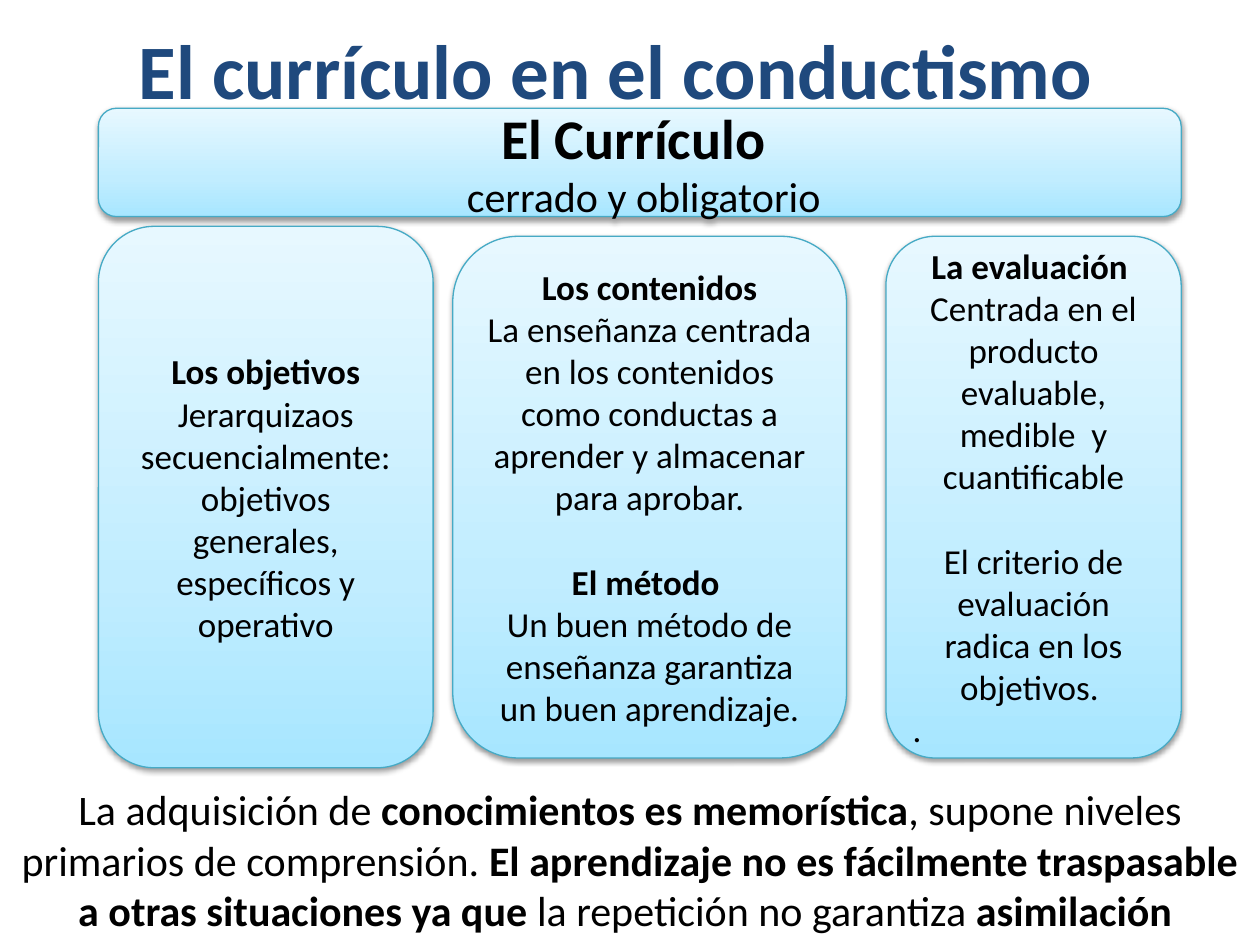
from dataclasses import dataclass

from pptx import Presentation, util as u
from pptx.dml.color import RGBColor
from pptx.enum import shapes, text
from pptx.oxml import parse_xml
from pptx.oxml.ns import nsdecls, qn

NAVY = RGBColor(0x1F, 0x49, 0x7D)
BLACK = RGBColor(0, 0, 0)
TEAL = RGBColor(0x46, 0xAA, 0xC5)
STOPS = (
    (0, RGBColor(0xA7, 0xE6, 0xFF)),
    (35, RGBColor(0xC1, 0xED, 0xFF)),
    (100, RGBColor(0xE7, 0xF8, 0xFF)),
)
FONT = "Calibri"
CELL = u.Inches(10) / 128  # square grid: 128 columns by 96 rows
GAP = 24.4  # one line of 20 pt text
MID, TOP = text.MSO_ANCHOR.MIDDLE, text.MSO_ANCHOR.TOP
CENTER, JUSTIFY = text.PP_ALIGN.CENTER, text.PP_ALIGN.JUSTIFY


@dataclass(frozen=True)
class Run:
    words: str
    bold: bool = False
    size: float = 20
    color: RGBColor = BLACK


@dataclass(frozen=True)
class Para:
    runs: tuple[Run, ...]
    before: float = 0
    align: text.PP_ALIGN = CENTER


@dataclass(frozen=True)
class Block:
    col: float
    row: float
    cols: float
    rows: float
    paras: tuple[Para, ...]
    card: bool = True
    anchor: text.MSO_ANCHOR = MID


def line(words: str, bold: bool = False, size: float = 20,
         color: RGBColor = BLACK, **form) -> Para:
    return Para((Run(words, bold, size, color),), **form)


TITLE = Block(5, -1, 115.2, 16, (
    line("El currículo en el conductismo", True, 44, NAVY),
), card=False)

HEAD = Block(10, 11, 110, 11, (
    line("El Currículo ", True, 32),
    Para((Run(" "), Run("cerrado y obligatorio", size=24))),
))

GOALS = Block(10, 23, 34, 55, (
    line("Los objetivos", True),
    line("Jerarquizaos secuencialmente: objetivos generales, "
         "específicos y operativo"),
))

GRADES = Block(90, 24, 30, 53, (
    line("La evaluación ", True),
    line("Centrada en el producto evaluable, medible  y cuantificable"),
    line("El criterio de evaluación radica en los objetivos. ", before=GAP),
    line(".", align=JUSTIFY),
))

TOPICS = Block(46, 24, 40, 53, (
    line("Los contenidos", True),
    line("La enseñanza centrada en los contenidos como conductas a "
         "aprender y almacenar para aprobar."),
    line("El método ", True, before=GAP),
    line("Un buen método de enseñanza garantiza un buen aprendizaje."),
))

CLOSE = Block(0, 79, 128, 16.8, (
    Para((
        Run("La adquisición de ", size=24),
        Run("conocimientos es memorística", True, 24),
        Run(", supone niveles primarios de comprensión. ", size=24),
        Run("El aprendizaje no es fácilmente traspasable "
            "a otras situaciones ya que ", True, 24),
        Run("la repetición no garantiza ", size=24),
        Run("asimilación ", True, 24),
    )),
), card=False, anchor=TOP)


def assign(item, values: dict) -> None:
    for key, value in values.items():
        setattr(item, key, value)


def paint(shape) -> None:
    """Give a card its three-stop gradient, thin outline and soft shadow."""
    shape.fill.gradient()
    shape.fill.gradient_angle = 90
    old = shape._element.spPr.find(f".//{qn('a:gsLst')}")
    stops = "".join(
        f'<a:gs pos="{pos * 1000}"><a:srgbClr val="{color}"/></a:gs>'
        for pos, color in STOPS)
    old.getparent().replace(
        old, parse_xml(f"<a:gsLst {nsdecls('a')}>{stops}</a:gsLst>"))
    shape.line.color.rgb = TEAL
    shape.line.width = u.Pt(0.75)
    shape.shadow.inherit = False
    shape._element.spPr.find(qn("a:effectLst")).append(parse_xml(
        f'<a:outerShdw {nsdecls("a")} blurRad="{u.Pt(3.1)}" '
        f'dist="{u.Pt(1.6)}" dir="5400000" rotWithShape="0">'
        '<a:srgbClr val="000000"><a:alpha val="38000"/></a:srgbClr>'
        '</a:outerShdw>'))


def write(frame, block: Block) -> None:
    assign(frame, {"word_wrap": True, "vertical_anchor": block.anchor})
    for i, para in enumerate(block.paras):
        p = frame.add_paragraph() if i else frame.paragraphs[0]
        assign(p, {"alignment": para.align, "space_before": u.Pt(para.before)})
        for run in para.runs:
            r = p.add_run()
            r.text = run.words
            assign(r.font, {"name": FONT, "size": u.Pt(run.size),
                            "bold": run.bold})
            r.font.color.rgb = run.color


def draw(slide, block: Block) -> None:
    area = [round(n * CELL)
            for n in (block.col, block.row, block.cols, block.rows)]
    if block.card:
        shape = slide.shapes.add_shape(
            shapes.MSO_SHAPE.ROUNDED_RECTANGLE, *area)
        paint(shape)
    else:
        shape = slide.shapes.add_textbox(*area)
    write(shape.text_frame, block)


def main() -> None:
    deck = Presentation()
    assign(deck, {"slide_width": u.Inches(10), "slide_height": u.Inches(7.5)})
    slide = deck.slides.add_slide(deck.slide_layouts[6])
    for block in (TITLE, HEAD, GOALS, GRADES, TOPICS, CLOSE):
        draw(slide, block)
    deck.save("out.pptx")


if __name__ == "__main__":
    main()
